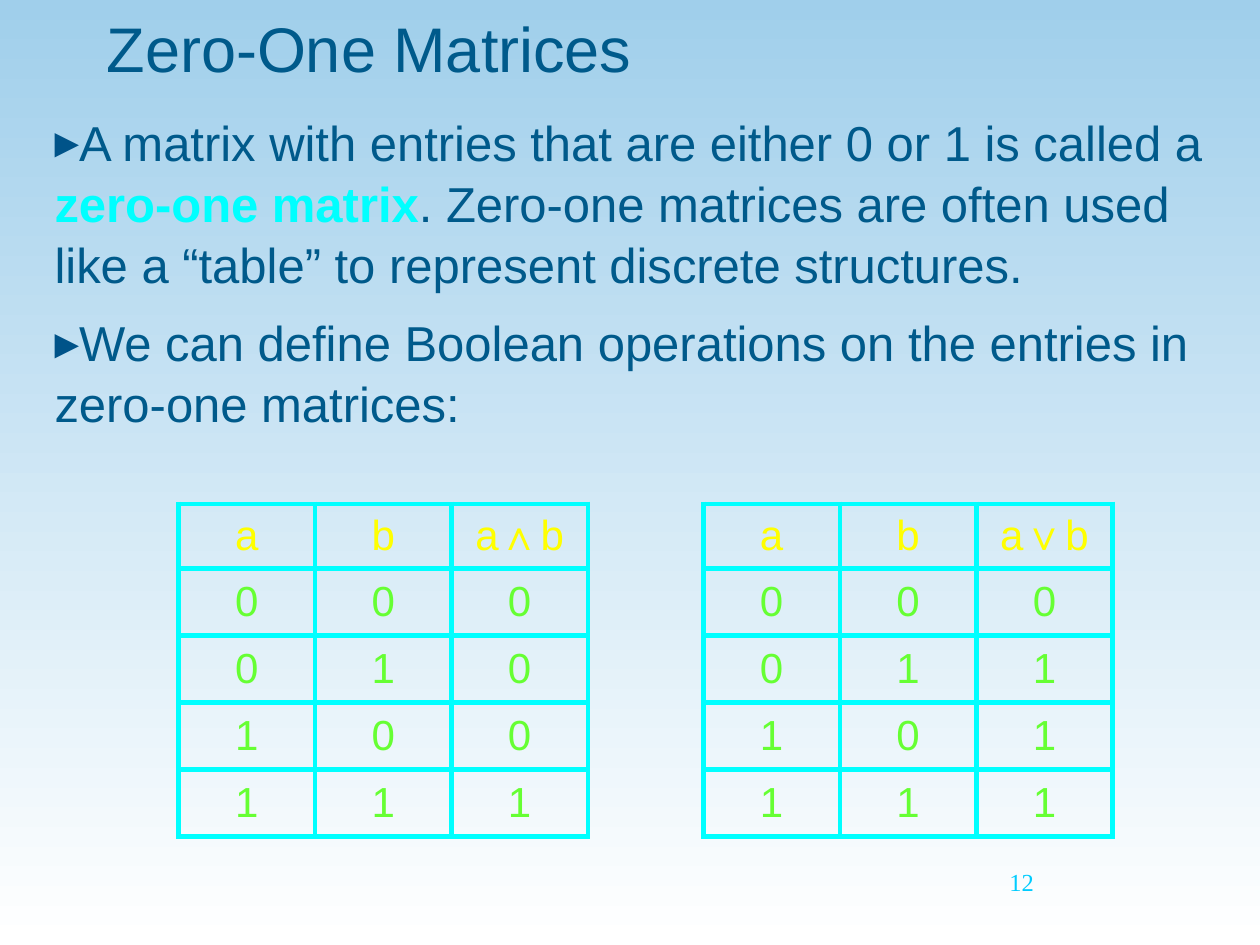
"""Build a slide on zero-one matrices with two Boolean truth tables."""
from itertools import product

from lxml.etree import SubElement as Sub
from pptx import Presentation
from pptx.dml.color import RGBColor
from pptx.enum.text import MSO_ANCHOR as Anchor, PP_ALIGN as Align
from pptx.oxml.ns import qn
from pptx.util import Cm, Pt

SKY = RGBColor(0xA0, 0xCF, 0xEB)
WHITE = RGBColor(0xFF, 0xFF, 0xFF)
NAVY = RGBColor(0x00, 0x5A, 0x8B)
MARK = RGBColor(0x00, 0x53, 0x89)
CYAN = RGBColor(0x00, 0xFF, 0xFF)
AQUA = RGBColor(0x00, 0xCC, 0xFF)
GOLD = RGBColor(0xFF, 0xFF, 0x00)
LIME = RGBColor(0x66, 0xFF, 0x33)

POINTS = [
    ["A matrix with entries that are either 0 or 1 is called a ",
     "zero-one matrix",
     ". Zero-one matrices are often used like a “table” to represent "
     "discrete structures."],
    ["We can define Boolean operations on the entries in "
     "zero-one matrices:"],
]
TERM = "zero-one matrix"
PAIRS = list(product((0, 1), repeat=2))


def paint(slide):
    fill = slide.background.fill
    fill.gradient()
    fill.gradient_angle = 270
    for stop, color, place in zip(fill.gradient_stops, (SKY, WHITE), (0, 1)):
        stop.color.rgb = color
        stop.position = place


def style(para, size, color, face="Arial"):
    font = para.font
    font.size, font.name = Pt(size), face
    font.color.rgb = color


def add_box(slide, left, top, width, height, anchor=Anchor.TOP):
    box = slide.shapes.add_textbox(Cm(left), Cm(top), Cm(width), Cm(height))
    frame = box.text_frame
    frame.word_wrap = True
    frame.vertical_anchor = anchor
    return frame


def add_line(frame, text, size, color, face="Arial"):
    para = frame.paragraphs[0]
    para.text = text
    style(para, size, color, face)


def add_mark(para):
    props = para._p.get_or_add_pPr()
    color = Sub(props, qn("a:buClr"))
    Sub(color, qn("a:srgbClr"), val=str(MARK))
    Sub(props, qn("a:buFont"), typeface="Arial")
    Sub(props, qn("a:buChar"), char="▸")


def add_points(frame):
    for i, parts in enumerate(POINTS):
        para = frame.add_paragraph() if i else frame.paragraphs[0]
        add_mark(para)
        para.line_spacing = 1.04
        if i:
            para.space_before = Pt(9.5)
        style(para, 28, NAVY)
        for part in parts:
            run = para.add_run()
            run.text = part
            if part == TERM:
                run.font.bold = True
                run.font.color.rgb = CYAN


def add_edges(cell):
    props = cell._tc.get_or_add_tcPr()
    for side in "LRTB":
        edge = Sub(props, qn(f"a:ln{side}"), w=str(Pt(3)))
        fill = Sub(edge, qn("a:solidFill"))
        Sub(fill, qn("a:srgbClr"), val=str(CYAN))


def add_truth(slide, left, sign, rule):
    rows = [("a", "b", f"a{sign}b")]
    rows += [(a, b, rule((a, b))) for a, b in PAIRS]
    table = slide.shapes.add_table(
        len(rows), 3, Cm(left), Cm(10.16), Cm(8.25), Cm(6.7)).table
    table.first_row = table.horz_banding = False
    for col in table.columns:
        col.width = Cm(2.75)
    for i, row in enumerate(rows):
        table.rows[i].height = Cm(1.35 if i else 1.3)
        for j, value in enumerate(row):
            cell = table.cell(i, j)
            add_edges(cell)
            cell.fill.background()
            cell.vertical_anchor = Anchor.MIDDLE
            add_line(cell.text_frame, str(value), 24, LIME if i else GOLD)
            cell.text_frame.paragraphs[0].alignment = Align.CENTER


def main():
    deck = Presentation()
    deck.slide_width, deck.slide_height = Cm(25.4), Cm(19.05)
    slide = deck.slides.add_slide(deck.slide_layouts[6])
    paint(slide)
    title = add_box(slide, 1.9, 0, 21.6, 1.9, Anchor.MIDDLE)
    add_line(title, "Zero-One Matrices", 36, NAVY)
    add_points(add_box(slide, 0.85, 2.1, 24.13, 7.82))
    page = add_box(slide, 20.1, 17.35, 5.3, 1.27)
    add_line(page, "12", 14, AQUA, "Times New Roman")
    add_truth(slide, 3.6, "∧", min)
    add_truth(slide, 14.18, "∨", max)
    deck.save("out.pptx")


if __name__ == "__main__":
    main()
